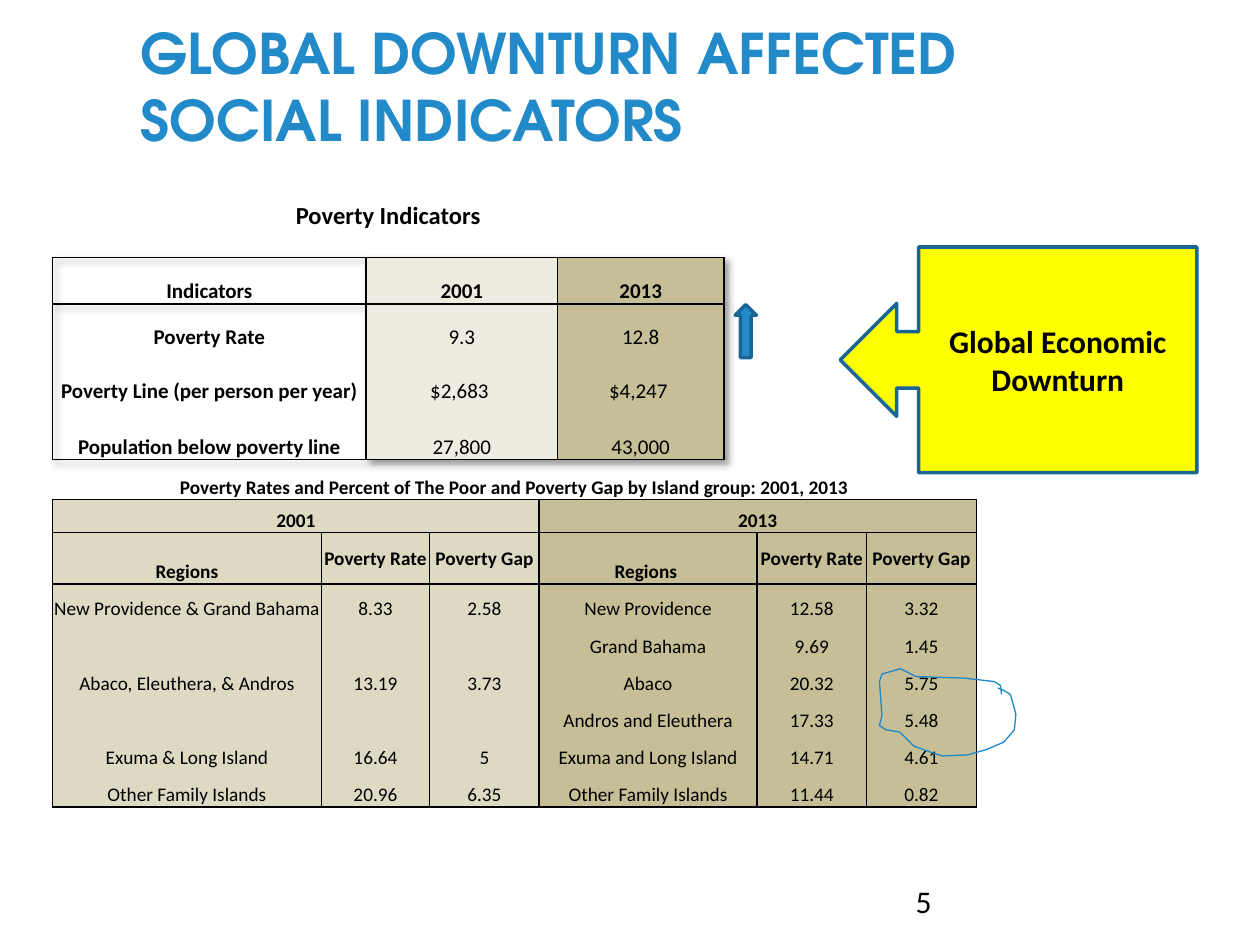
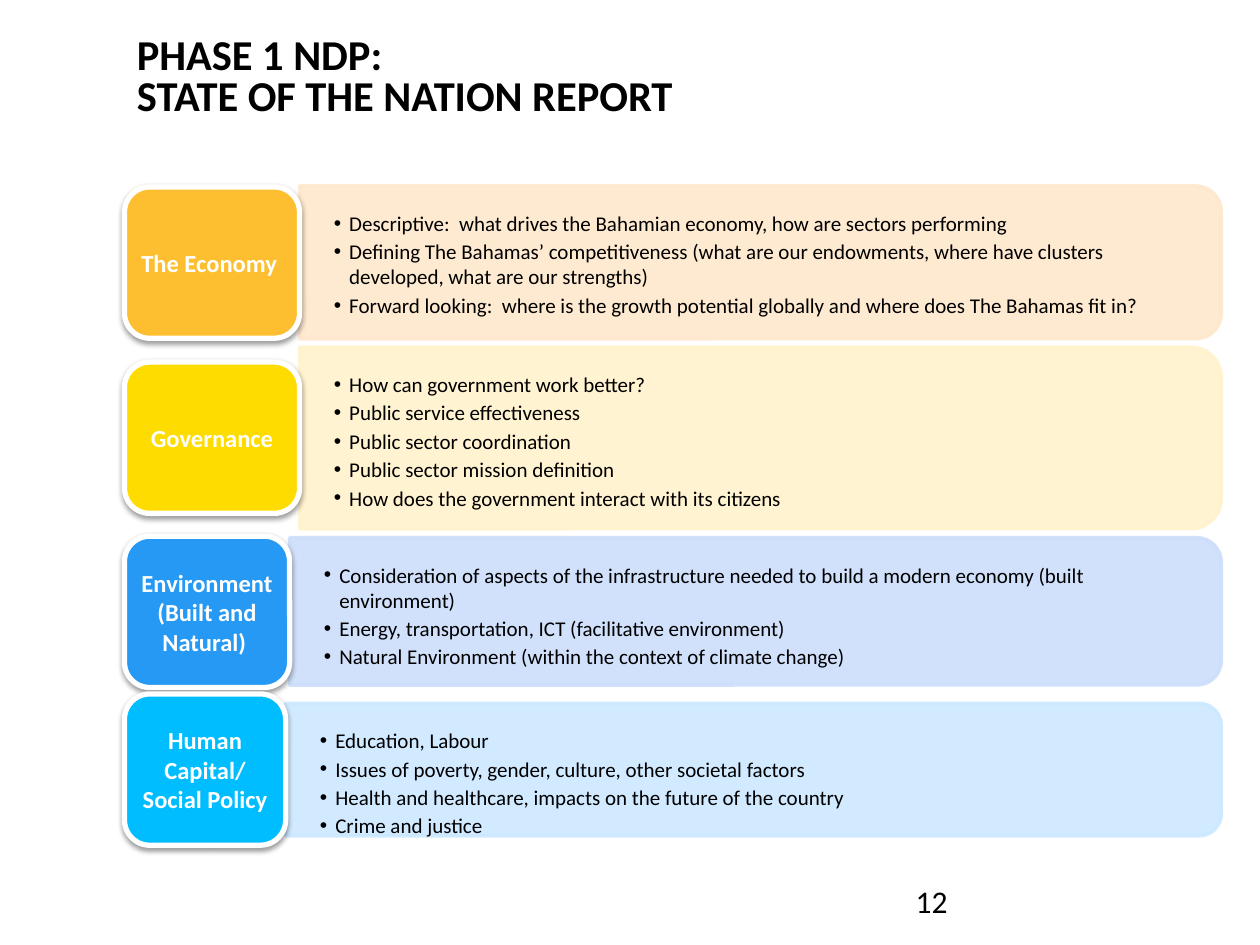
from dataclasses import dataclass

from lxml import etree
from pptx import Presentation
from pptx import util as u
from pptx.dml.color import RGBColor
from pptx.enum import shapes as es, text as et
from pptx.oxml.ns import qn

Cm, Pt = u.Cm, u.Pt
KIND = es.MSO_SHAPE
TOP, MID, LOW = (et.MSO_ANCHOR.TOP, et.MSO_ANCHOR.MIDDLE, et.MSO_ANCHOR.BOTTOM)
LEFT, MIDST = et.PP_ALIGN.LEFT, et.PP_ALIGN.CENTER
HUE = {
    "black": "000000", "white": "FFFFFF", "blue": "228AC8", "edge": "196694",
    "ink": "1D88C8", "yellow": "FFFF00", "ivory": "EEECE1", "sand": "DDD9C3",
    "tan": "C5BE97", "amber": "FDBF30", "peach": "FEE8CD", "gold": "FFDC00",
    "cream": "FFF2CC", "azure": "2699F4", "mist": "CDDEFB", "cyan": "00BDFF",
    "sky": "CCE8FF",
}
NO_STYLE = "{2D5ABB26-0587-4C30-8999-92F81FD0307C}"
RIGHT_EDGE = 24.62
TILE_X, TILE_H = 2.51, 3.05


@dataclass
class Box:
    x: float
    y: float
    w: float
    h: float

    def emu(self) -> list:
        return [Cm(v) for v in (self.x, self.y, self.w, self.h)]


@dataclass
class Grid:
    x: float
    y: float
    cols: list
    rows: list
    cells: list
    fills: list
    size: int
    caption: int      # caption text size
    first: int        # first filled row
    body: int         # first body row
    spans: list       # (row, first column, last column)
    keys: tuple = ()  # bold body columns
    mids: tuple = ()  # header columns set in the middle


@dataclass
class Topic:
    name: str
    tile_y: float
    tile_w: float
    tile: str
    band_y: float
    band_h: float
    band: str
    points: list


# Shared helpers
def rgb(hue: str) -> RGBColor:
    return RGBColor.from_string(HUE[hue])


def apply(item, **vals) -> None:
    for key, val in vals.items():
        setattr(item, key, val)


def node(parent, tag: str, **vals):
    return etree.SubElement(parent, qn(tag), {k: str(v) for k, v in vals.items()})


def shadow(parent, blur: float, dist: float, angle: int, alpha: int):
    effects = node(parent, "a:effectLst")
    cast = node(effects, "a:outerShdw", blurRad=Pt(blur), dist=Pt(dist),
                dir=angle * 60000, algn="tl", rotWithShape=0)
    node(node(cast, "a:srgbClr", val=HUE["black"]), "a:alpha", val=alpha * 1000)
    return effects


def write(para, words: str, size: float, hue: str = "black", bold: bool = False,
          face: str = "Calibri", align=LEFT, **more) -> None:
    apply(para, alignment=align, **more)
    if not words:
        node(para._p, "a:endParaRPr", sz=size * 100)
        return
    para.text = words
    for run in para.runs:
        apply(run.font, size=Pt(size), bold=bold, name=face)
        run.font.color.rgb = rgb(hue)


def frame(shape, anchor=TOP, side: float = 0.25, ends: float = 0.13):
    body = shape.text_frame
    apply(body, word_wrap=True, auto_size=et.MSO_AUTO_SIZE.NONE,
          vertical_anchor=anchor, margin_left=Cm(side), margin_right=Cm(side),
          margin_top=Cm(ends), margin_bottom=Cm(ends))
    return body


def place(shape, box: Box) -> None:
    apply(shape, **dict(zip(("left", "top", "width", "height"), box.emu())))


def head(slide, words: str, box: Box, size: float, **look) -> None:
    title = slide.shapes.title
    place(title, box)
    write(frame(title).paragraphs[0], words, size, bold=True, **look)


def number(slide, value: int) -> None:
    box = slide.shapes.add_textbox(*Box(18.21, 17.65, 5.92, 1.02).emu())
    write(frame(box).paragraphs[0], str(value), 18)


def style(shape, fill: str, line: str, width: float):
    shape.shadow.inherit = False
    if fill:
        shape.fill.solid()
        shape.fill.fore_color.rgb = rgb(fill)
    else:
        shape.fill.background()
    shape.line.color.rgb = rgb(line)
    shape.line.width = Pt(width)
    return shape


def add(slide, kind, box: Box, fill: str, line: str, width: float):
    return style(slide.shapes.add_shape(kind, *box.emu()), fill, line, width)


# Tables
def border(cell, sides: str) -> None:
    props = cell._tc.get_or_add_tcPr()
    for side in "LRTB":
        if side in sides:
            line = node(props, "a:ln" + side, w=Pt(1))
            node(node(line, "a:solidFill"), "a:srgbClr", val=HUE["black"])


def draw_grid(slide, grid: Grid):
    count = len(grid.rows), len(grid.cols)
    box = Box(grid.x, grid.y, sum(grid.cols), sum(grid.rows))
    table = slide.shapes.add_table(*count, *box.emu()).table
    apply(table, first_row=False, horz_banding=False)
    table._tbl.tblPr.find(qn("a:tableStyleId")).text = NO_STYLE
    for col, wide in zip(table.columns, grid.cols):
        col.width = Cm(wide)
    for row, high in zip(table.rows, grid.rows):
        row.height = Cm(high)
    for r, a, b in grid.spans:
        table.cell(r, a).merge(table.cell(r, b))
    for r, texts in enumerate(grid.cells):
        top = r < grid.body
        for c, words in enumerate(texts):
            cell = table.cell(r, c)
            mid = r == grid.body - 1 and c in grid.mids
            apply(cell, margin_left=Cm(0.02), margin_right=Cm(0.02),
                  margin_top=Cm(0.02), margin_bottom=0,
                  vertical_anchor=MID if mid else LOW)
            write(cell.text_frame.paragraphs[0], words,
                  grid.size if r else grid.caption,
                  bold=top or c in grid.keys, align=MIDST)
            if r >= grid.first:
                border(cell, "LRTB" if top else
                       "LRB" if r == count[0] - 1 else "LR")
            if r >= grid.first and grid.fills[c]:
                cell.fill.solid()
                cell.fill.fore_color.rgb = rgb(grid.fills[c])
            else:
                cell.fill.background()
    return table


POVERTY = Grid(
    1.06, 4.01, [6.32, 3.86, 3.35], [0.64, 0.53, 0.94, 0.94, 1.09, 1.11],
    [["Poverty Indicators", "", ""], ["", "", ""],
     ["Indicators", "2001", "2013"],
     ["Poverty Rate", "9.3", "12.8"],
     ["Poverty Line (per person per year)", "$2,683 ", "$4,247 "],
     ["Population below poverty line", "27,800", "43,000"]],
    [None, "ivory", "tan"], 12, 14, first=2, body=3, spans=[(0, 0, 2)], keys=(0,))
ISLANDS = Grid(
    1.06, 9.54, [5.42, 2.18, 2.21, 4.39, 2.21, 2.21],
    [0.53, 0.66, 1.04] + [0.75] * 6,
    [["Poverty Rates and Percent of The Poor and Poverty Gap by Island group: "
      "2001, 2013"] + [""] * 5,
     ["2001", "", "", "2013", "", ""],
     ["Regions", "Poverty Rate", "Poverty Gap",
      "Regions ", "Poverty Rate", "Poverty Gap"],
     ["New Providence & Grand Bahama", "8.33", "2.58",
      "New Providence", "12.58", "3.32"],
     ["", "", "", "Grand Bahama", "9.69", "1.45"],
     ["Abaco, Eleuthera, & Andros", "13.19", "3.73", "Abaco", "20.32", "5.75"],
     ["", "", "", "Andros and Eleuthera", "17.33", "5.48"],
     ["Exuma & Long Island", "16.64", "5",
      "Exuma and Long Island", "14.71", "4.61"],
     ["Other Family Islands", "20.96", "6.35",
      "Other Family Islands", "11.44", "0.82"]],
    ["sand"] * 3 + ["tan"] * 3, 11, 11, first=1, body=3,
    spans=[(0, 0, 5), (1, 0, 2), (1, 3, 5)], mids=(1, 2, 4, 5))

# Hand-drawn loop around two poverty gaps
LOOP = [(20.19, 14), (20.17, 13.82), (20.04, 13.74), (19.43, 13.67),
        (18.47, 13.64), (18.15, 13.48), (17.78, 13.59), (17.73, 13.74),
        (17.78, 14.43), (17.73, 14.63), (17.86, 14.71), (18.14, 14.76),
        (18.26, 14.88), (18.42, 15.04), (18.75, 15.16), (19, 15.24),
        (19.5, 15.22), (19.89, 15.11), (20.24, 14.96), (20.45, 14.71),
        (20.48, 14.4), (20.37, 14), (20.24, 13.92), (20.12, 13.87)]


def draw_loop(slide) -> None:
    start, *rest = [(Cm(x), Cm(y)) for x, y in LOOP]
    pen = slide.shapes.build_freeform(*start)
    pen.add_line_segments(rest, close=False)
    style(pen.convert_to_shape(), None, "ink", 0.75)


def downturn(deck) -> None:
    slide = deck.slides.add_slide(deck.slide_layouts[5])
    head(slide, "GLOBAL DOWNTURN AFFECTED SOCIAL INDICATORS",
         Box(2.58, 0.24, 20.32, 3.78), 32, hue="blue", face="TeX Gyre Adventor")
    number(slide, 5)
    props = draw_grid(slide, POVERTY)._tbl.tblPr
    props.insert(0, shadow(props, 4, 3, 45, 40))
    draw_grid(slide, ISLANDS)
    add(slide, KIND.UP_ARROW, Box(14.82, 6.14, 0.43, 1.07), "blue", "edge", 2)
    draw_loop(slide)
    call = add(slide, KIND.LEFT_ARROW_CALLOUT, Box(16.94, 4.98, 7.19, 4.55),
               "yellow", "edge", 2)
    for n, val in enumerate((0.25, 0.25, 0.25, 0.78)):
        call.adjustments[n] = val
    write(frame(call, MID).paragraphs[0], "Global Economic Downturn", 18,
          bold=True, align=MIDST)


# Report topics: tile, band and list
TOPICS = [
    Topic("The Economy ", 3.77, 3.53, "amber", 3.75, 3.08, "peach", [
        "Descriptive:  what drives the Bahamian economy, how are sectors performing",
        "Defining The Bahamas’ competitiveness (what are our endowments, where "
        "have clusters developed, what are our strengths)",
        "Forward looking:  where is the growth potential globally and where does "
        "The Bahamas fit in?"]),
    Topic("Governance", 7.3, 3.53, "gold", 7, 3.66, "cream", [
        "How can government work better?", "Public service effectiveness",
        "Public sector coordination", "Public sector mission definition",
        "How does the government interact with its citizens"]),
    Topic("Environment (Built and Natural) ", 10.81, 3.33, "azure",
          10.84, 2.97, "mist", [
              "Consideration of aspects of the infrastructure needed to build a "
              "modern economy (built environment)",
              "Energy, transportation, ICT (facilitative environment)",
              "Natural Environment (within the context of climate change)"]),
    Topic("Human Capital/ Social Policy", 13.99, 3.25, "cyan",
          14.18, 2.67, "sky", [
              "Education, Labour",
              "Issues of poverty, gender, culture, other societal factors",
              "Health and healthcare, impacts on the future of the country",
              "Crime and justice"]),
]


def draw_topic(slide, topic: Topic, holder) -> None:
    x = TILE_X + topic.tile_w
    wide, high = RIGHT_EDGE - x, topic.band_h
    # Band is turned a quarter so that its round corners face right
    turned = Box(x + (wide - high) / 2, topic.band_y + (high - wide) / 2, high, wide)
    band = add(slide, KIND.ROUND_2_SAME_RECTANGLE, turned, topic.band, topic.band, 2)
    band.rotation = 90
    for tint in band._element.spPr.iter(qn("a:srgbClr")):
        node(tint, "a:alpha", val=90000)

    place(holder, Box(x, topic.band_y + 0.13, wide - 0.14, high - 0.26))
    holder.element.getparent().append(holder.element)
    body = frame(holder, TOP, 0.69, 0.36)
    for n, words in enumerate(topic.points):
        para = body.add_paragraph() if n else body.paragraphs[0]
        props = para._p.get_or_add_pPr()
        apply(para, space_before=Pt(0), space_after=Pt(1.8))
        props.set("marL", str(Cm(0.31)))
        props.set("indent", str(-Cm(0.31)))
        node(props, "a:buFont", typeface="Arial")
        node(props, "a:buChar", char="•")
        write(para, words, 12)

    tile = add(slide, KIND.ROUNDED_RECTANGLE,
               Box(TILE_X, topic.tile_y, topic.tile_w, TILE_H),
               topic.tile, "white", 3)
    props = tile._element.spPr
    props.remove(props.find(qn("a:effectLst")))
    shadow(props, 3.1, 1.6, 90, 38)
    write(frame(tile, MID, 0.15, 0.08).paragraphs[0], topic.name, 14, "white",
          True, align=MIDST)


def report(deck) -> None:
    slide = deck.slides.add_slide(deck.slide_layouts[4])
    number(slide, 12)
    holders = [h for h in slide.placeholders if h.placeholder_format.idx]
    for topic, holder in zip(TOPICS, holders):
        draw_topic(slide, topic, holder)
    head(slide, "PHASE 1 NDP: \vSTATE OF THE NATION REPORT",
         Box(2.51, 0.64, 15.44, 2.54), 24.3, line_spacing=0.8)


def main() -> None:
    deck = Presentation()
    apply(deck, slide_width=Cm(25.4), slide_height=Cm(19.05))
    downturn(deck)
    report(deck)
    deck.save("out.pptx")


if __name__ == "__main__":
    main()
